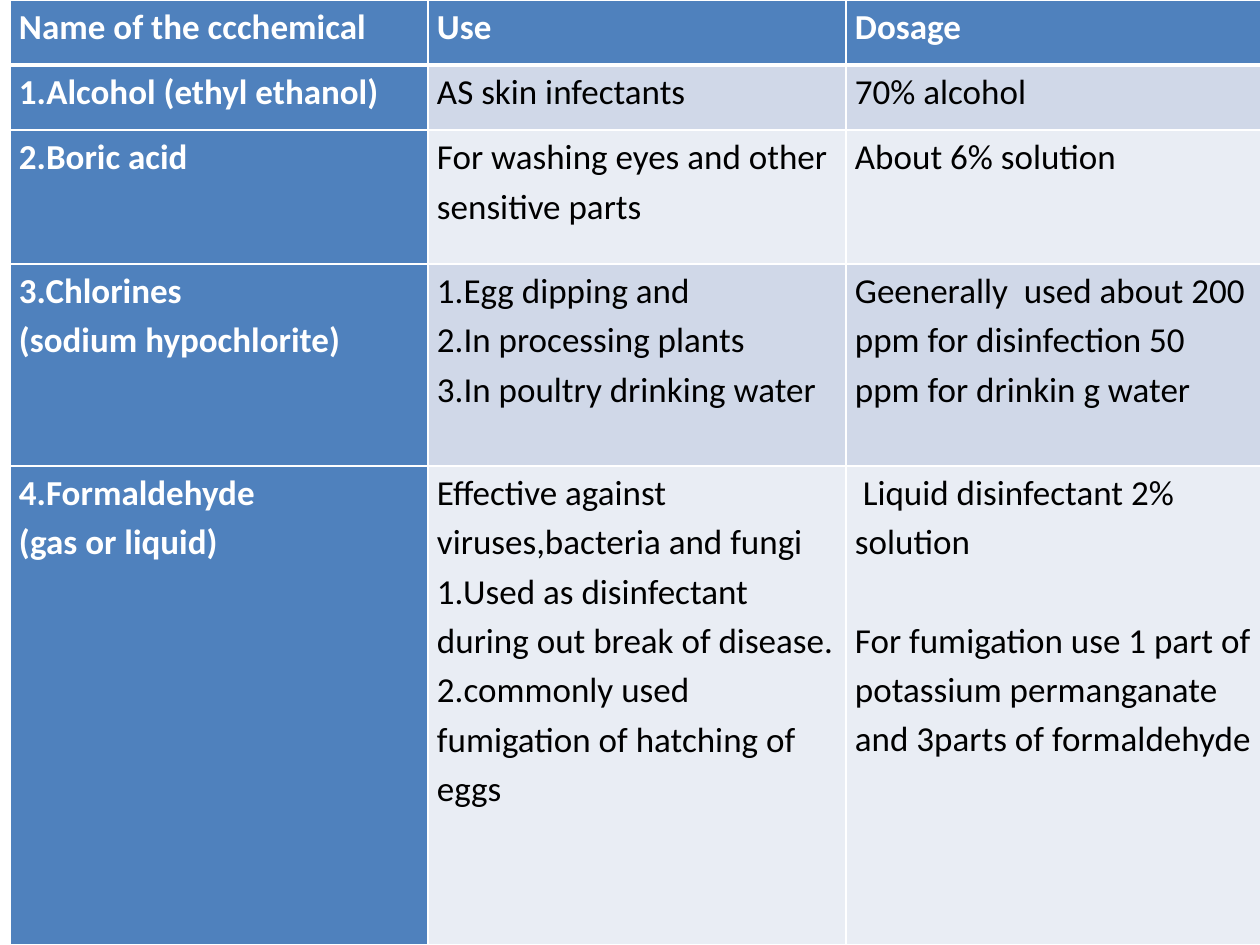
import pptx
import pptx.util
import pptx.dml.color
import pptx.oxml
import pptx.oxml.ns

HEADERS = ["Name of the ccchemical", "Use", "Dosage"]
# One row per chemical; each cell is a list of paragraphs.
CHEMICALS = [
    (["1.Alcohol (ethyl ethanol)"], ["AS skin infectants"], ["70% alcohol"]),
    (["2.Boric acid"],
     ["For washing eyes and other sensitive parts"],
     ["About 6% solution"]),
    (["3.Chlorines", "(sodium hypochlorite)"],
     ["1.Egg dipping and", "2.In processing plants", "3.In poultry drinking water"],
     ["Geenerally  used about 200 ppm for disinfection 50 ppm for drinkin g water"]),
    (["4.Formaldehyde", "(gas or liquid)"],
     ["Effective against viruses,bacteria and fungi",
      "1.Used as disinfectant during out break of disease.",
      "2.commonly used fumigation of hatching of eggs"],
     [" Liquid disinfectant 2% solution",
      "For fumigation use 1 part of potassium permanganate and 3parts of formaldehyde"]),
]
COLORS = {"heading": "4F81BD", "odd": "D0D8E8", "even": "E9EDF4",
          "white": "FFFFFF", "black": "000000"}
SLIDE_SIZE = (1260, 945)
TABLE_LEFT, TABLE_TOP = 10, 0
COLUMN_WIDTH = 418
ROW_HEIGHTS = [65, 65, 134, 202, 479]
SIDE_MARGIN = 9
FONT, FONT_SIZE, LINE_SPACING = "Calibri", 20, 1.15
DOSAGE_GAP = 28  # points, one line of text


def px(length):
    return pptx.util.Emu(round(length * 914400 / 126))


def rgb(name):
    return pptx.dml.color.RGBColor.from_string(COLORS[name])


def add_borders(cell, bottom_width):
    """Draw white cell edges, inserted ahead of the fill as the schema asks."""
    properties = cell._tc.get_or_add_tcPr()
    widths = {"lnL": 1, "lnR": 1, "lnT": 1, "lnB": bottom_width}
    for position, (edge, width) in enumerate(widths.items()):
        properties.insert(position, pptx.oxml.parse_xml(
            f'<a:{edge} {pptx.oxml.ns.nsdecls("a")} w="{pptx.util.Pt(width)}">'
            f'<a:solidFill><a:srgbClr val="{COLORS["white"]}"/></a:solidFill>'
            f'</a:{edge}>'))


def fill_cell(cell, paragraphs, fill, is_heading, bottom_width, gap):
    cell.margin_left = cell.margin_right = px(SIDE_MARGIN)
    cell.margin_top = cell.margin_bottom = 0
    cell.fill.solid()
    cell.fill.fore_color.rgb = rgb(fill)
    add_borders(cell, bottom_width)
    frame = cell.text_frame
    for index, text in enumerate(paragraphs):
        paragraph = frame.add_paragraph() if index else frame.paragraphs[0]
        paragraph.line_spacing = LINE_SPACING
        paragraph.space_before = pptx.util.Pt(gap if index else 0)
        run = paragraph.add_run()
        run.text = text
        run.font.name = FONT
        run.font.size = pptx.util.Pt(FONT_SIZE)
        run.font.bold = is_heading
        run.font.color.rgb = rgb("white" if is_heading else "black")


def main():
    deck = pptx.Presentation()
    deck.slide_width, deck.slide_height = map(px, SLIDE_SIZE)
    slide = deck.slides.add_slide(deck.slide_layouts[6])
    rows = [[[header] for header in HEADERS], *CHEMICALS]
    disinfectants = slide.shapes.add_table(
        len(rows), len(HEADERS), px(TABLE_LEFT), px(TABLE_TOP),
        px(COLUMN_WIDTH * len(HEADERS)), px(sum(ROW_HEIGHTS))).table
    for column in disinfectants.columns:
        column.width = px(COLUMN_WIDTH)
    for r, (row, height) in enumerate(zip(rows, ROW_HEIGHTS)):
        disinfectants.rows[r].height = px(height)
        for c, paragraphs in enumerate(row):
            is_heading = r == 0 or c == 0
            fill = "heading" if is_heading else "odd" if r % 2 else "even"
            gap = DOSAGE_GAP if HEADERS[c] == "Dosage" else 0
            fill_cell(disinfectants.cell(r, c), paragraphs, fill, is_heading,
                      1 if r else 3, gap)
    deck.save("out.pptx")


if __name__ == "__main__":
    main()
